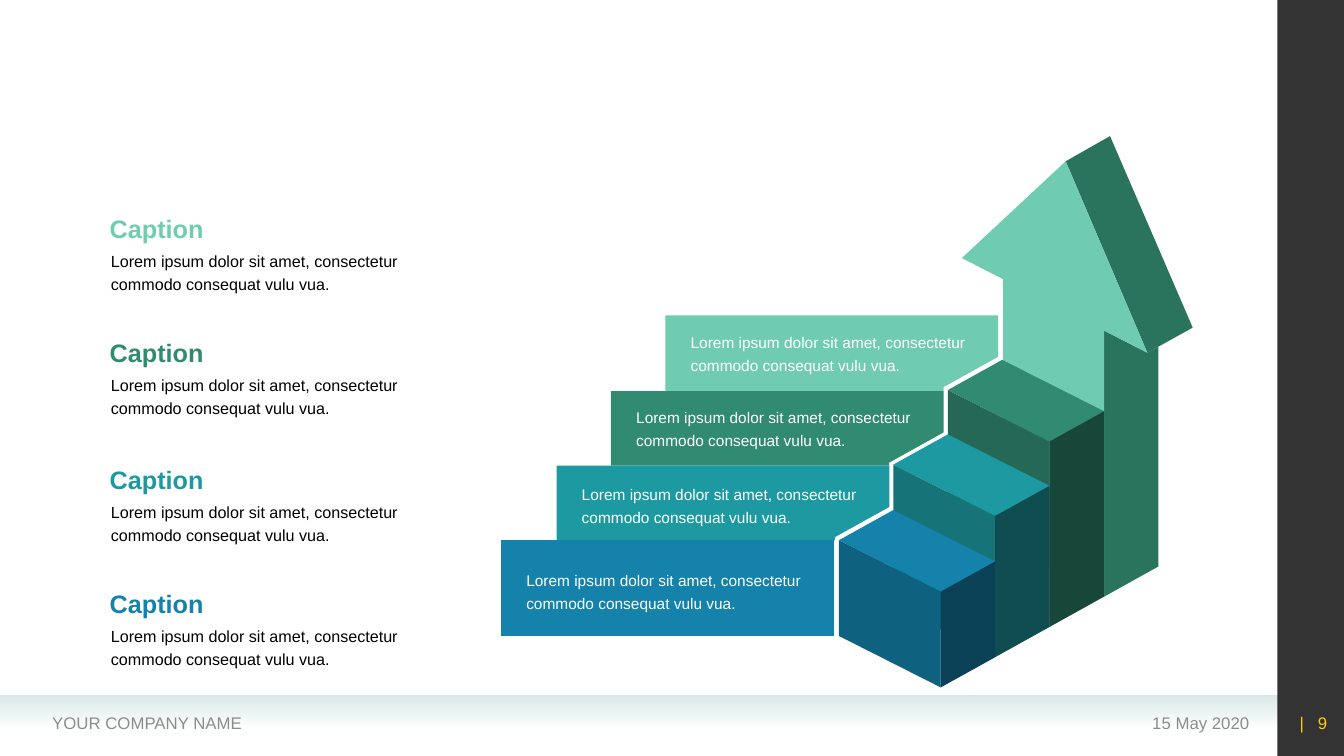
"""Build a slide with a rising staircase arrow, four step panels and four captions."""
from lxml.etree import SubElement
from pptx import Presentation
from pptx.dml.color import RGBColor
from pptx.enum.shapes import MSO_SHAPE
from pptx.enum.text import MSO_ANCHOR, MSO_AUTO_SIZE, PP_ALIGN
from pptx.oxml.ns import qn
from pptx.util import Pt

PX = 9144
HUES = {
    "mint": "70CCB1", "pine": "2A745E",
    "green": "318B71", "green_front": "256855", "green_side": "184639",
    "teal": "1D9AA1", "teal_front": "167479", "teal_side": "0F4D50",
    "blue": "1482AB", "blue_front": "0F6180", "blue_side": "0A4156",
    "haze": "D9E9E8", "black": "000000", "white": "FFFFFF",
    "gray": "8C8C8C", "gold": "FFCC00",
}
LOREM = "Lorem ipsum dolor sit amet, consectetur commodo consequat vulu vua."

deck = Presentation()
deck.slide_width, deck.slide_height = 1333 * PX, 750 * PX
slide = deck.slides.add_slide(deck.slide_layouts[6])
shapes = slide.shapes


def write(text, left, top, width, height, size=12, hue="gray", bold=False,
          align=PP_ALIGN.LEFT, anchor=MSO_ANCHOR.MIDDLE, inset=10, pitch=None, grow=False):
    box = shapes.add_textbox(left * PX, top * PX, width * PX, height * PX)
    frame = box.text_frame
    frame.word_wrap = True
    frame.auto_size = MSO_AUTO_SIZE.SHAPE_TO_FIT_TEXT if grow else MSO_AUTO_SIZE.NONE
    frame.vertical_anchor = anchor
    frame.margin_left = inset * PX
    para = frame.paragraphs[0]
    para.alignment = align
    if pitch:
        para.line_spacing = Pt(pitch)
    run = para.add_run()
    run.text = text
    run.font.name, run.font.size, run.font.bold = "Arial", Pt(size), bold
    run.font.color.rgb = RGBColor.from_string(HUES[hue])
    return para


def draw(hue, *points):
    pen = shapes.build_freeform(*points[0], scale=PX)
    pen.add_line_segments(points[1:], close=True)
    form = pen.convert_to_shape()
    form.shadow.inherit = False
    form.fill.solid()
    form.fill.fore_color.rgb = RGBColor.from_string(HUES[hue])
    form.line.fill.background()


band = shapes.add_shape(MSO_SHAPE.RECTANGLE, 0, 690 * PX, 1267 * PX, 31 * PX)
band.fill.gradient()
band.fill.gradient_angle = 270
for stop in band.fill.gradient_stops:
    stop.color.rgb = RGBColor.from_string(HUES["haze"])
for stop, place in zip(band.fill.gradient_stops, (0, 1)):
    stop.position = place
rail = shapes.add_shape(MSO_SHAPE.RECTANGLE, 1267 * PX, 0, 66 * PX, 750 * PX)
rail.fill.solid()
rail.fill.fore_color.rgb = RGBColor.from_string(HUES["black"])
for bar, alpha in ((band, "0"), (rail, "80000")):
    bar.shadow.inherit = False
    bar.line.fill.background()
    tint = bar.element.spPr.findall(".//" + qn("a:srgbClr"))[-1]
    SubElement(tint, qn("a:alpha"), val=alpha)

write("15 May 2020", 910, 697, 339, 40, align=PP_ALIGN.RIGHT)
write("YOUR COMPANY NAME", 42, 697, 490, 40)
page = write("|\t9", 1260, 697, 67, 40, hue="gold", inset=29)
tabs = SubElement(page.runs[0].font.fill and page._p.get_or_add_pPr(), qn("a:tabLst"))
SubElement(tabs, qn("a:tab"), pos=str(18 * PX), algn="l")

draw("pine", (1149, 562), (1149, 344), (1138, 350), (1095, 328), (1095, 592))
draw("pine", (1101, 135), (1057, 160), (1138, 350), (1183, 325))
draw("mint", (1095, 592), (1095, 328), (1138, 350), (1057, 160),
     (954, 256), (995, 277), (995, 541))

panels = (
    ("mint", 660, 313, 388, 321),
    ("green", 606, 388, 462, 396),
    ("teal", 552, 462, 536, 472),
    ("blue", 497, 536, 631, 557),
)
for hue, left, top, base, _ in panels:
    right = left + 330
    if hue == "blue":
        edge = [(right, base)]
    else:
        edge = [(right, top + 41), (right - 54, top + 71), (right - 54, base)]
    draw(hue, (left, base), (left, top), (right, top), *edge)

for step, hue, top in ((2, "green", 387), (1, "teal", 461), (0, "blue", 536)):
    left, base = 832 + 54 * step, 631 - 30 * step
    front, back = left + 101, left + 155
    draw(hue, (back, top + 21), (left + 54, top - 30), (left, top), (front, top + 51))
    draw(hue + "_front", (front, base + 51), (front, top + 51), (left, top), (left, base))
    draw(hue + "_side", (back, base + 21), (back, top + 21),
         (front, top + 51), (front, base + 51))

for (hue, left, _, _, line), top in zip(panels, (207, 330, 456, 579)):
    write(LOREM, left + 14, line, 302, 53, size=11, hue="white",
          anchor=MSO_ANCHOR.TOP, inset=11, pitch=16.4, grow=True)
    write("Caption", 99, top, 166, 40, size=18, hue=hue, bold=True, grow=True)
    write(LOREM, 99, top + 34, 365, 53, size=11.5, hue="black",
          anchor=MSO_ANCHOR.TOP, inset=11, pitch=16.4, grow=True)

deck.save("out.pptx")
